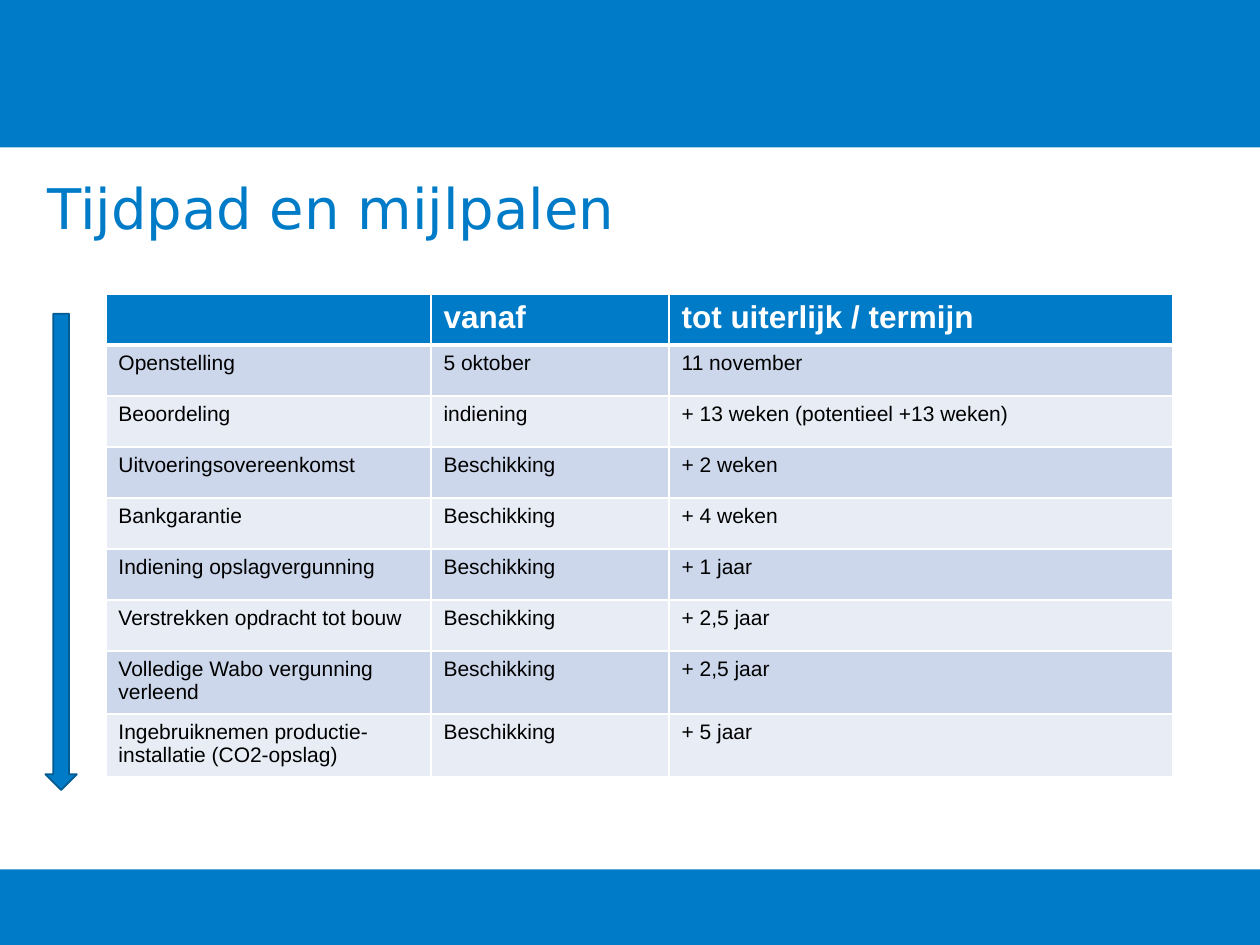
from dataclasses import dataclass

from lxml.etree import SubElement
from pptx import Presentation
from pptx.dml.color import RGBColor
from pptx.enum.shapes import MSO_SHAPE
from pptx.enum.text import MSO_ANCHOR
from pptx.oxml.ns import qn
from pptx.util import Inches, Pt


@dataclass(frozen=True)
class Theme:
    blue: str = "007BC7"
    edge: str = "005B93"
    white: str = "FFFFFF"
    black: str = "000000"
    bands: tuple = ("CCD7EB", "E7ECF5")
    title_font: str = "DejaVu Sans"
    body_font: str = "Arial"
    title_size: int = 32
    header_size: int = 18
    body_size: int = 12


MILESTONES = [
    ("", "vanaf", "tot uiterlijk / termijn"),
    ("Openstelling", "5 oktober", "11 november"),
    ("Beoordeling", "indiening", "+ 13 weken (potentieel +13 weken)"),
    ("Uitvoeringsovereenkomst", "Beschikking", "+ 2 weken"),
    ("Bankgarantie", "Beschikking", "+ 4 weken"),
    ("Indiening opslagvergunning", "Beschikking", "+ 1 jaar"),
    ("Verstrekken opdracht tot bouw", "Beschikking", "+ 2,5 jaar"),
    ("Volledige Wabo vergunning verleend", "Beschikking", "+ 2,5 jaar"),
    ("Ingebruiknemen productie-installatie (CO2-opslag)", "Beschikking", "+ 5 jaar"),
]


def write(tf, text, *, font, size, color, bold=False, spacing=None):
    p = tf.paragraphs[0]
    p.line_spacing = spacing
    p.font.size = Pt(size)
    if text:
        r = p.add_run()
        r.text = text
        r.font.name, r.font.size, r.font.bold = font, Pt(size), bold
        r.font.color.rgb = RGBColor.from_string(color)


class SlideBuilder:
    """Draws themed elements on a slide, with lengths as shares of its size."""

    def __init__(self, prs, theme):
        self.theme = theme
        self.width, self.height = prs.slide_width, prs.slide_height
        self.slide = prs.slides.add_slide(prs.slide_layouts[6])

    def box(self, x, y, w, h):
        return (round(x * self.width), round(y * self.height),
                round(w * self.width), round(h * self.height))

    def shape(self, kind, *share, line=None):
        sp = self.slide.shapes.add_shape(kind, *self.box(*share))
        sp.shadow.inherit = False
        sp.fill.solid()
        sp.fill.fore_color.rgb = RGBColor.from_string(self.theme.blue)
        if line:
            sp.line.color.rgb = RGBColor.from_string(line)
            sp.line.width = Pt(1)
        else:
            sp.line.fill.background()

    def title(self, text, *share):
        sp = self.slide.shapes.add_textbox(*self.box(*share))
        sp.fill.solid()
        sp.fill.fore_color.rgb = RGBColor.from_string(self.theme.white)
        tf = sp.text_frame
        tf.word_wrap = True
        tf.vertical_anchor = MSO_ANCHOR.TOP
        write(tf, text, font=self.theme.title_font, size=self.theme.title_size,
              color=self.theme.blue, spacing=0.9)

    def borders(self, cell, **widths):
        tc_pr = cell._tc.get_or_add_tcPr()
        for side in "LRTB":
            ln = SubElement(tc_pr, qn(f"a:ln{side}"), w=str(Pt(widths.get(side, 1))))
            fill = SubElement(ln, qn("a:solidFill"))
            SubElement(fill, qn("a:srgbClr"), val=self.theme.white)

    def table(self, rows, columns, x, y, row_height):
        t = self.theme
        share = (x, y, sum(columns), row_height * len(rows))
        table = self.slide.shapes.add_table(
            len(rows), len(columns), *self.box(*share)).table
        for column, w in zip(table.columns, columns):
            column.width = round(w * self.width)
        for i, row in enumerate(rows):
            header = i == 0
            rule = {0: {"B": 3}, 1: {"T": 3}}.get(i, {})
            for j, text in enumerate(row):
                cell = table.cell(i, j)
                self.borders(cell, **rule)
                cell.fill.solid()
                cell.fill.fore_color.rgb = RGBColor.from_string(
                    t.blue if header else t.bands[(i - 1) % 2])
                write(cell.text_frame, text, font=t.body_font, bold=header,
                      size=t.header_size if header else t.body_size,
                      color=t.white if header else t.black)


def main():
    prs = Presentation()
    prs.slide_width, prs.slide_height = Inches(10), Inches(7.5)
    theme = Theme()
    s = SlideBuilder(prs, theme)
    s.shape(MSO_SHAPE.RECTANGLE, 0, 0.92, 1, 0.08)
    s.shape(MSO_SHAPE.RECTANGLE, 0, 0, 1, 0.156)
    s.title("Tijdpad en mijlpalen", 0.028, 0.185, 0.945, 0.125)
    s.table(MILESTONES, (0.258, 0.189, 0.4), 0.084, 0.311, 0.054)
    s.shape(MSO_SHAPE.DOWN_ARROW, 0.036, 0.332, 0.025, 0.504, line=theme.edge)
    prs.save("out.pptx")


if __name__ == "__main__":
    main()
